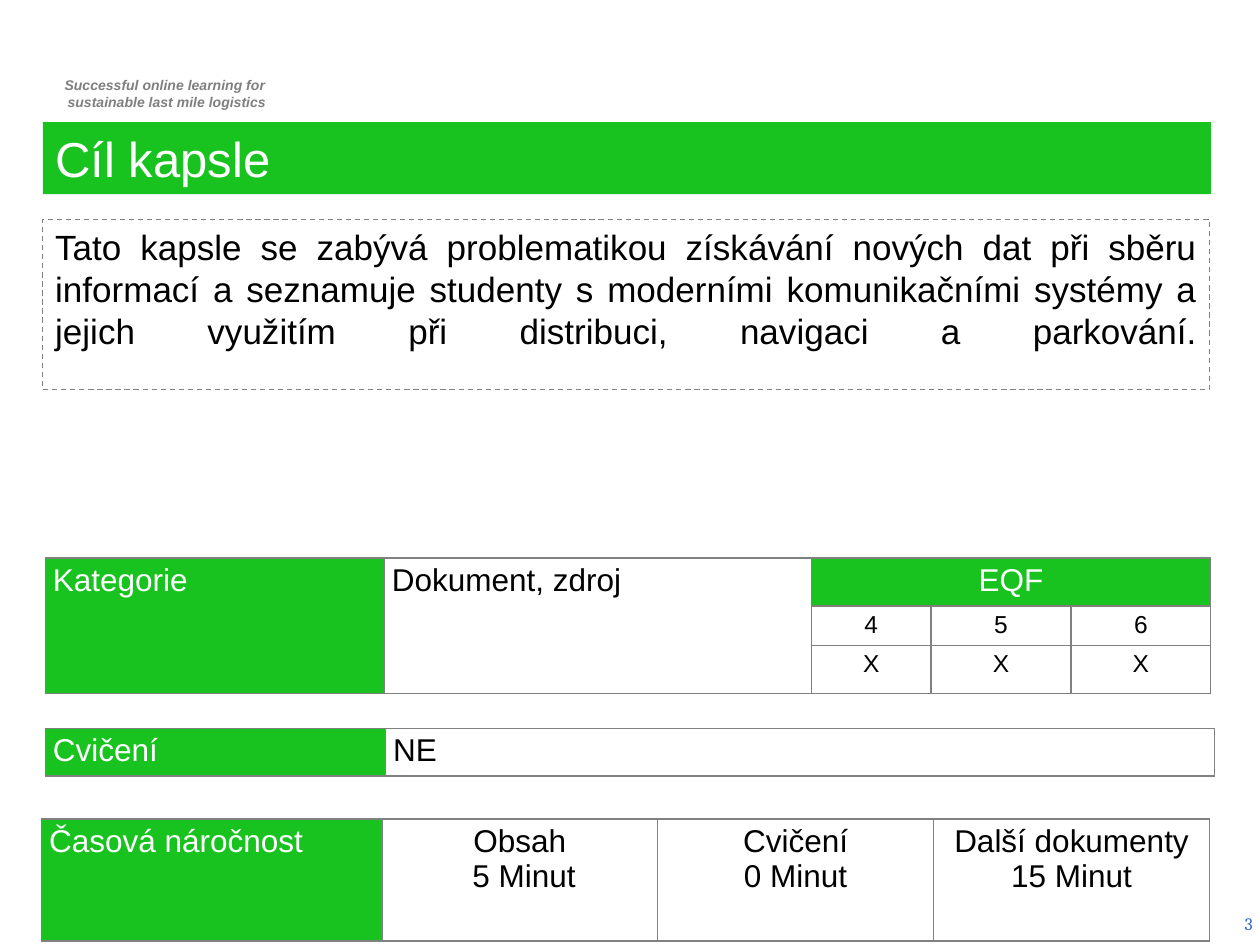
"""Build the capsule goal slide with its header, text box and three tables."""
from dataclasses import dataclass
from typing import Any

from lxml.etree import SubElement as Sub
from pptx import Presentation
from pptx.dml.color import RGBColor
from pptx.enum.dml import MSO_LINE_DASH_STYLE as Dash
from pptx.enum.shapes import MSO_SHAPE as Form
from pptx.enum.text import MSO_ANCHOR as Anchor, MSO_AUTO_SIZE as Auto, PP_ALIGN as Align
from pptx.oxml.ns import qn
from pptx.util import Inches, Pt

GREEN = RGBColor(0x18, 0xC3, 0x20)
WHITE = RGBColor(0xFF, 0xFF, 0xFF)
BLACK = RGBColor(0, 0, 0)
GREY = RGBColor(0x80, 0x80, 0x80)
DIM = RGBColor(0x7F, 0x7F, 0x7F)
BLUE = RGBColor(0x33, 0x66, 0xCC)

WIDE, HIGH = Inches(10), Inches(7.5)
COLS, ROWS = 100, 75
LEFT, JUST, MID, RIGHT = Align.LEFT, Align.JUSTIFY, Align.CENTER, Align.RIGHT


@dataclass
class Area:
    """A place on the grid, in columns and rows."""
    col: float
    row: float
    wide: float
    high: float


@dataclass
class Cell:
    """A table cell with its text, look and span."""
    row: int
    col: int
    text: str
    align: Align = MID
    size: int = 18
    head: bool = False
    down: int = 1
    over: int = 1


@dataclass
class Grid:
    """A table with its place, track sizes and cells."""
    left: float
    top: float
    cols: list[float]
    rows: list[float]
    cells: list[Cell]


GRIDS = [
    Grid(3.6, 44.3, [26.9, 33.9, 9.5, 11.1, 11.1], [3.7, 3.1, 3.7], [
        Cell(0, 0, "Kategorie", JUST, head=True, down=3),
        Cell(0, 1, "Dokument, zdroj", JUST, down=3),
        Cell(0, 2, "EQF", head=True, over=3),
        *(Cell(1, 2 + i, mark, size=14) for i, mark in enumerate("456")),
        *(Cell(2, 2 + i, "X", size=14) for i in range(3)),
    ]),
    Grid(3.6, 57.8, [27, 65.8], [3.7], [
        Cell(0, 0, "Cvičení", JUST, head=True),
        Cell(0, 1, "NE", JUST),
    ]),
    Grid(3.3, 65, [27, 21.9, 21.9, 21.9], [9.7], [
        Cell(0, 0, "Časová náročnost", JUST, head=True),
        Cell(0, 1, "Obsah\n 5 Minut"),
        Cell(0, 2, "Cvičení\n0 Minut"),
        Cell(0, 3, "Další dokumenty\n15 Minut"),
    ]),
]


def across(num: float) -> int:
    """Turn grid columns into a length."""
    return round(WIDE * num / COLS)


def down(num: float) -> int:
    """Turn grid rows into a length."""
    return round(HIGH * num / ROWS)


def span(area: Area) -> tuple[int, int, int, int]:
    """Give left, top, width and height of an area."""
    return across(area.col), down(area.row), across(area.wide), down(area.high)


def apply(item: Any, form: dict[str, Any]) -> None:
    """Set each attribute named in the format."""
    for name, value in form.items():
        setattr(item, name, value)


def write(frame: Any, text: str, align: Align, tint: RGBColor, **form: Any) -> None:
    """Fill a text frame and format its paragraphs and runs."""
    frame.text = text
    frame.word_wrap = True
    for para in frame.paragraphs:
        para.alignment = align
        for run in para.runs:
            apply(run.font, {"name": "Arial", **form})
            run.font.color.rgb = tint


def edge(cell: Any) -> None:
    """Draw a thin grey line on all sides of a cell."""
    prop = cell._tc.get_or_add_tcPr()
    for i, side in enumerate(("lnL", "lnR", "lnT", "lnB")):
        line = prop.makeelement(qn(f"a:{side}"), {"w": str(Pt(1))})
        fill = Sub(line, qn("a:solidFill"))
        Sub(fill, qn("a:srgbClr"), val=str(GREY))
        prop.insert(i, line)


def draw(slide: Any, grid: Grid) -> None:
    """Add one table to the slide."""
    area = Area(grid.left, grid.top, sum(grid.cols), sum(grid.rows))
    table = slide.shapes.add_table(len(grid.rows), len(grid.cols), *span(area)).table
    apply(table, {"first_row": False, "horz_banding": False})
    for col, num in zip(table.columns, grid.cols):
        col.width = across(num)
    for row, num in zip(table.rows, grid.rows):
        row.height = down(num)
    pad = {"margin_left": Inches(0.06), "margin_right": Inches(0.06),
           "margin_top": Inches(0.04), "margin_bottom": Inches(0.04)}
    for cell in table.iter_cells():
        apply(cell, pad)
        cell.fill.background()
        edge(cell)
    for item in grid.cells:
        cell = table.cell(item.row, item.col)
        if item.down * item.over > 1:
            cell.merge(table.cell(item.row + item.down - 1, item.col + item.over - 1))
        if item.head:
            cell.fill.solid()
            cell.fill.fore_color.rgb = GREEN
        tint = WHITE if item.head else BLACK
        write(cell.text_frame, item.text, item.align, tint, size=Pt(item.size))


def label(slide: Any, area: Area, text: str, align: Align, tint: RGBColor, **form: Any) -> Any:
    """Add a text box and return its frame."""
    frame = slide.shapes.add_textbox(*span(area)).text_frame
    write(frame, text, align, tint, **form)
    return frame


def title(slide: Any) -> None:
    """Place and format the title bar."""
    bar = slide.shapes.title
    apply(bar, dict(zip(("left", "top", "width", "height"), span(Area(3.4, 9.7, 92.7, 5.7)))))
    bar.fill.solid()
    bar.fill.fore_color.rgb = GREEN
    write(bar.text_frame, "Cíl kapsle", LEFT, WHITE, size=Pt(28))
    apply(bar.text_frame, {"vertical_anchor": Anchor.TOP, "auto_size": Auto.NONE})


def goal(slide: Any) -> None:
    """Add the dashed box with the goal of the capsule."""
    box = slide.shapes.add_shape(Form.RECTANGLE, *span(Area(3.4, 17.4, 92.6, 13.5)))
    box.shadow.inherit = False
    box.fill.background()
    box.line.color.rgb = GREY
    apply(box.line, {"width": Pt(0.75), "dash_style": Dash.DASH})
    text = ("Tato kapsle se zabývá problematikou získávání nových dat při sběru "
            "informací a seznamuje studenty s moderními komunikačními systémy a "
            "jejich využitím při distribuci, navigaci a parkování.\v")
    write(box.text_frame, text, JUST, BLACK, size=Pt(20))
    box.text_frame.vertical_anchor = Anchor.TOP
    box.text_frame.paragraphs[0].space_after = Pt(8)


def main() -> None:
    """Build and save the slide."""
    deck = Presentation()
    apply(deck, {"slide_width": WIDE, "slide_height": HIGH})
    slide = deck.slides.add_slide(deck.slide_layouts[5])
    motto = label(slide, Area(2.9, 5.6, 20.3, 3.7),
                  "Successful online learning for \nsustainable last mile logistics",
                  MID, DIM, size=Pt(8), bold=True, italic=True)
    for para in motto.paragraphs:
        para._p.get_or_add_pPr().set("marL", str(Inches(0.04)))
    page = label(slide, Area(77.1, 71.3, 23.3, 4), "3", RIGHT, BLUE,
                 size=Pt(10), name="Cambria")
    page.vertical_anchor = Anchor.MIDDLE
    title(slide)
    goal(slide)
    for grid in GRIDS:
        draw(slide, grid)
    deck.save("out.pptx")


if __name__ == "__main__":
    main()
